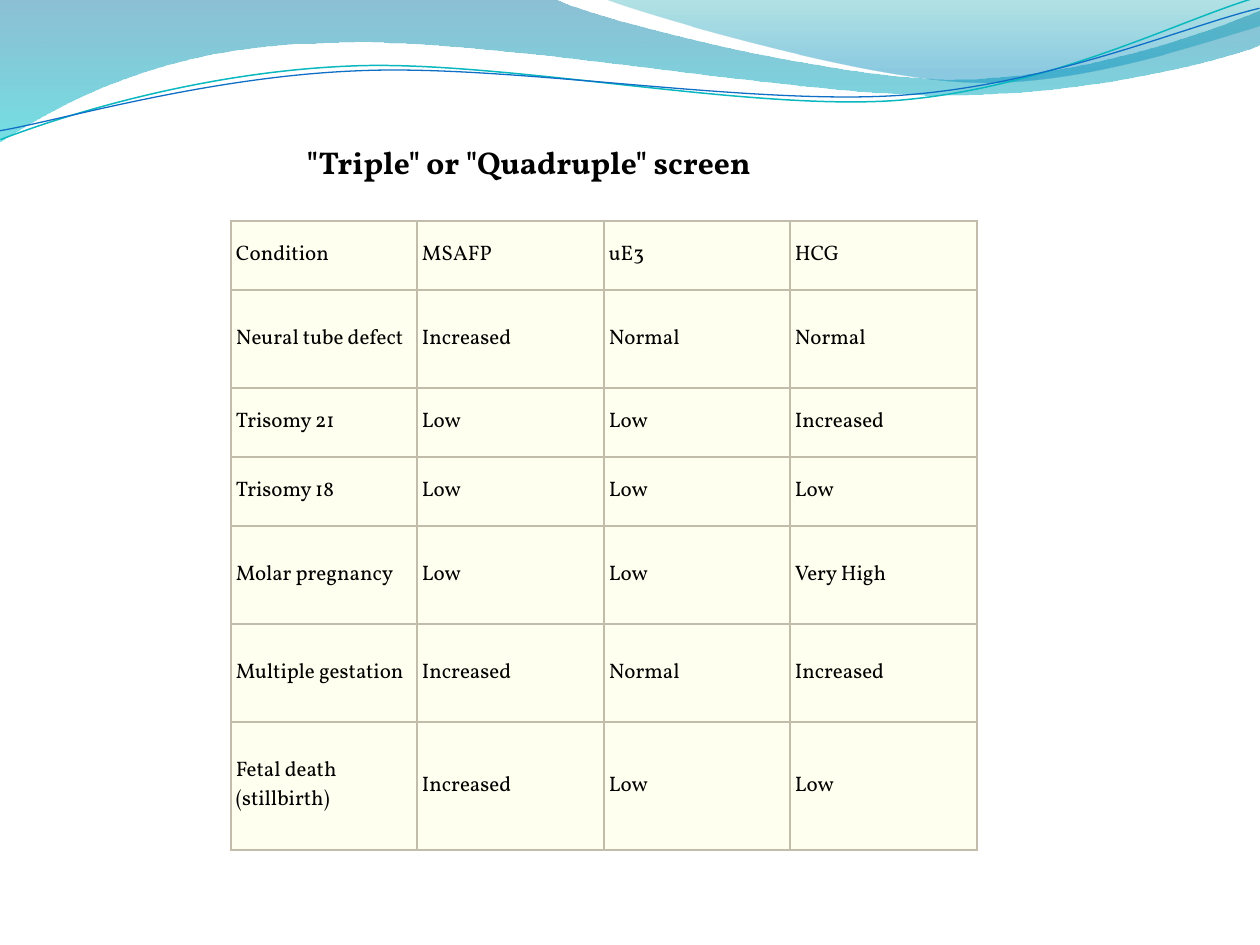
import dataclasses
import typing

import lxml.etree
import pptx
import pptx.dml.color
import pptx.enum.text
import pptx.oxml.ns
import pptx.util

EMU_PER_PX = 914400 / 126
FONT = "Vollkorn"
INK = "000000"
CELL_FILL = "FFFFF0"
BORDER = "C2BCAA"

Point = tuple[int, int]


class Stop(typing.NamedTuple):
    position: float
    color: str
    opacity: int


class Box(typing.NamedTuple):
    left: int
    top: int
    width: int
    height: int


@dataclasses.dataclass
class Wave:
    """A chain of lines (one point) and cubic curves (three points)."""

    box: Box
    start: Point
    segments: list[list[Point]]
    stops: tuple[Stop, ...] = ()
    line_color: str = ""
    line_width: float = 0
    rotation: float = 0


WAVES = [
    Wave(
        Box(-1, -1, 1262, 143),
        (0, 0),
        [
            [(554, -1)],
            [(600, 21), (837, 79), (955, 79)],
            [(1075, 79), (1207, 33), (1260, 11)],
            [(1261, 45)],
            [(1239, 55), (1096, 96), (940, 95)],
            [(784, 95), (481, 35), (324, 43)],
            [(163, 45), (58, 105), (-1, 142)],
            [(0, 0)],
        ],
        stops=(Stop(0, "0074A1", 45), Stop(1, "00C6CF", 55)),
    ),
    Wave(
        Box(604, -1, 656, 88),
        (604, -1),
        [
            [(641, 14), (859, 78), (969, 82)],
            [(1079, 87), (1211, 40), (1260, 26)],
            [(1260, 0)],
            [(604, -1)],
        ],
        stops=(Stop(0, "00A1A9", 30), Stop(0.8, "008BBF", 45)),
    ),
    Wave(
        Box(-2, 28, 1262, 89),
        (-2, 110),
        [
            [(58, 90), (199, 52), (350, 53)],
            [(499, 53), (745, 117), (896, 113)],
            [(1049, 108), (1184, 45), (1260, 27)],
        ],
        line_color="0AB8BF",
        line_width=0.85,
        rotation=357.3,
    ),
    Wave(
        Box(-2, 38, 1264, 73),
        (-2, 101),
        [
            [(57, 94), (207, 57), (357, 58)],
            [(509, 58), (750, 112), (902, 108)],
            [(1052, 104), (1188, 52), (1262, 38)],
        ],
        line_color="0F6FC6",
        line_width=0.75,
        rotation=357.3,
    ),
]

COLUMN_WIDTHS = [186, 187, 186, 187]
ROW_HEIGHTS = [69, 98, 69, 69, 98, 98, 128]
SCREEN_RESULTS = [
    ["Condition", "MSAFP", "uE3", "HCG"],
    ["Neural tube defect", "Increased", "Normal", "Normal"],
    ["Trisomy 21", "Low", "Low", "Increased"],
    ["Trisomy 18", "Low", "Low", "Low"],
    ["Molar pregnancy", "Low", "Low", "Very High"],
    ["Multiple gestation", "Increased", "Normal", "Increased"],
    ["Fetal death (stillbirth)", "Increased", "Low", "Low"],
]


def px(length: int) -> pptx.util.Emu:
    return pptx.util.Emu(round(length * EMU_PER_PX))


def rgb(color: str) -> pptx.dml.color.RGBColor:
    return pptx.dml.color.RGBColor.from_string(color)


def add_child(parent, tag: str, **attributes: str):
    return lxml.etree.SubElement(parent, pptx.oxml.ns.qn(tag), attributes)


def trace_outline(shape, wave: Wave) -> None:
    outline = next(shape._element.iter(pptx.oxml.ns.qn("a:path")))
    for child in list(outline):
        outline.remove(child)
    outline.set("w", str(px(wave.box.width)))
    outline.set("h", str(px(wave.box.height)))
    moves = [("a:moveTo", [wave.start])]
    moves += [("a:lnTo" if len(s) == 1 else "a:cubicBezTo", s) for s in wave.segments]
    for tag, points in moves:
        move = add_child(outline, tag)
        for x, y in points:
            add_child(move, "a:pt", x=str(px(x - wave.box.left)), y=str(px(y - wave.box.top)))
    if wave.stops:
        add_child(outline, "a:close")


def draw_wave(page, wave: Wave) -> None:
    builder = page.shapes.build_freeform(*map(px, wave.start))
    builder.add_line_segments([tuple(map(px, s[-1])) for s in wave.segments], close=False)
    shape = builder.convert_to_shape()
    shape.left, shape.top, shape.width, shape.height = map(px, wave.box)
    shape.rotation = wave.rotation
    shape.shadow.inherit = False
    trace_outline(shape, wave)
    if wave.stops:
        shape.line.fill.background()
        shape.fill.gradient()
        shape.fill.gradient_angle = 270
        for target, stop in zip(shape.fill.gradient_stops, wave.stops):
            target.position = stop.position
            target.color.rgb = rgb(stop.color)
        colors = shape._element.spPr.iter(pptx.oxml.ns.qn("a:srgbClr"))
        for color, stop in zip(list(colors), wave.stops):
            add_child(color, "a:alpha", val=str(stop.opacity * 1000))
    else:
        shape.fill.background()
        shape.line.color.rgb = rgb(wave.line_color)
        shape.line.width = pptx.util.Pt(wave.line_width)


def write(para, text: str, size: int, bold: bool = False) -> None:
    span = para.add_run()
    span.text = text
    span.font.name = FONT
    span.font.size = pptx.util.Pt(size)
    span.font.bold = bold
    span.font.color.rgb = rgb(INK)


def draw_title(page, text: str) -> None:
    box = page.shapes.add_textbox(px(294), px(137), px(500), px(50))
    box.text_frame.word_wrap = True
    write(box.text_frame.paragraphs[0], text, 18, bold=True)


def style_cell(cell) -> None:
    cell.vertical_anchor = pptx.enum.text.MSO_ANCHOR.MIDDLE
    cell.margin_left = cell.margin_right = cell.margin_top = cell.margin_bottom = px(5)
    properties = cell._tc.get_or_add_tcPr()
    for side in ("a:lnL", "a:lnR", "a:lnT", "a:lnB"):
        edge = add_child(properties, side, w=str(pptx.util.Pt(1.5)))
        add_child(add_child(edge, "a:solidFill"), "a:srgbClr", val=BORDER)
    cell.fill.solid()
    cell.fill.fore_color.rgb = rgb(CELL_FILL)


def draw_table(page, rows: list[list[str]]) -> None:
    box = Box(231, 221, sum(COLUMN_WIDTHS), sum(ROW_HEIGHTS))
    table = page.shapes.add_table(len(rows), len(rows[0]), *map(px, box)).table
    table.first_row = table.horz_banding = False
    for column, width in zip(table.columns, COLUMN_WIDTHS):
        column.width = px(width)
    for row, height, texts in zip(table.rows, ROW_HEIGHTS, rows):
        row.height = px(height)
        for cell, text in zip(row.cells, texts):
            style_cell(cell)
            write(cell.text_frame.paragraphs[0], text, 12)


def main() -> None:
    deck = pptx.Presentation()
    deck.slide_width, deck.slide_height = px(1260), px(945)
    page = deck.slides.add_slide(deck.slide_layouts[6])
    for wave in WAVES:
        draw_wave(page, wave)
    draw_title(page, '"Triple" or "Quadruple" screen')
    draw_table(page, SCREEN_RESULTS)
    deck.save("out.pptx")


if __name__ == "__main__":
    main()
